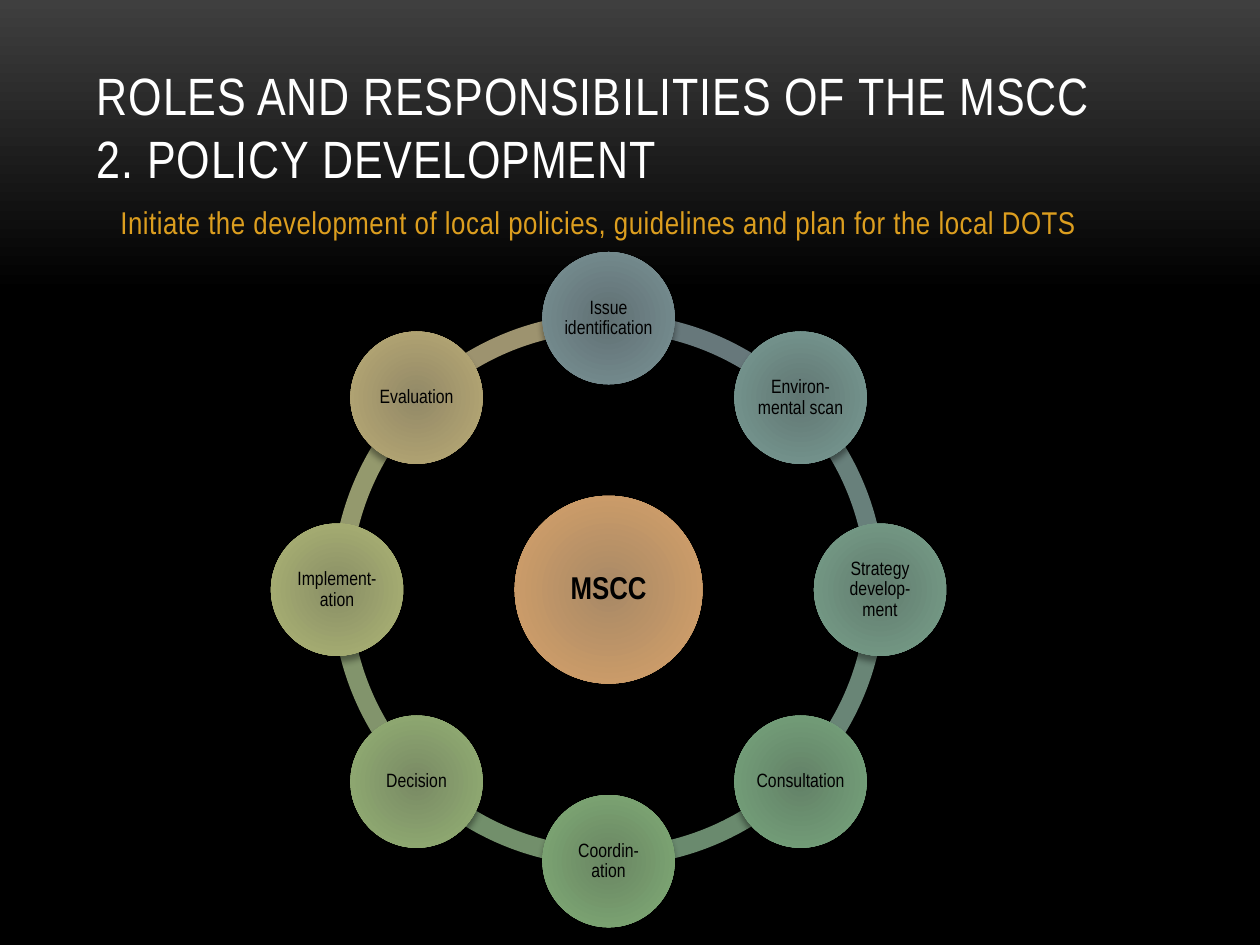
import math

import pptx
import pptx.dml.color
import pptx.enum.shapes
import pptx.enum.text
import pptx.oxml
import pptx.oxml.ns
import pptx.util
from pptx.util import Inches

RGBColor = pptx.dml.color.RGBColor
MSO_SHAPE = pptx.enum.shapes.MSO_SHAPE
ANCHOR = pptx.enum.text.MSO_ANCHOR
ALIGN = pptx.enum.text.PP_ALIGN

WHITE = RGBColor(0xFF, 0xFF, 0xFF)
BLACK = RGBColor(0x00, 0x00, 0x00)
CHARCOAL = RGBColor(0x3F, 0x3F, 0x3F)
AMBER = RGBColor(0xDC, 0x9E, 0x1F)
HUB_INNER = RGBColor(0xA8, 0x89, 0x66)
HUB_OUTER = RGBColor(0xD9, 0xA3, 0x6A)

FONT = "Arial Narrow"

# Clockwise from the top: label, inner colour, outer colour, colour of the arc that follows
STEPS = [
    ("Issue identification", RGBColor(0x60, 0x70, 0x73), RGBColor(0x7B, 0x93, 0x97), RGBColor(0x67, 0x78, 0x7B)),
    ("Environ-mental scan", RGBColor(0x61, 0x77, 0x73), RGBColor(0x7A, 0x9C, 0x95), RGBColor(0x68, 0x80, 0x7B)),
    ("Strategy develop-ment", RGBColor(0x62, 0x7C, 0x6E), RGBColor(0x79, 0xA1, 0x8C), RGBColor(0x69, 0x85, 0x76)),
    ("Consultation", RGBColor(0x63, 0x81, 0x67), RGBColor(0x78, 0xA7, 0x7E), RGBColor(0x6A, 0x8A, 0x6E)),
    ("Coordin-ation", RGBColor(0x6A, 0x86, 0x63), RGBColor(0x81, 0xAD, 0x77), RGBColor(0x72, 0x8F, 0x6B)),
    ("Decision", RGBColor(0x79, 0x8A, 0x64), RGBColor(0x96, 0xB3, 0x76), RGBColor(0x82, 0x94, 0x6C)),
    ("Implement-ation", RGBColor(0x89, 0x8E, 0x66), RGBColor(0xAF, 0xB7, 0x76), RGBColor(0x94, 0x99, 0x6D)),
    ("Evaluation", RGBColor(0x92, 0x89, 0x67), RGBColor(0xBC, 0xAC, 0x76), RGBColor(0x9D, 0x93, 0x6F)),
]

SHADOW_XML = (
    '<a:outerShdw %s blurRad="50800" dist="43180" dir="5400000" rotWithShape="0">'
    '<a:srgbClr val="000000"><a:alpha val="40000"/></a:srgbClr></a:outerShdw>'
) % pptx.oxml.ns.nsdecls("a")
RADIAL_XML = (
    '<a:path %s path="circle">'
    '<a:fillToRect l="100000" t="100000" r="100000" b="100000"/></a:path>'
) % pptx.oxml.ns.nsdecls("a")


def set_gradient(fill, stops):
    fill.gradient()
    for stop, (position, color) in zip(fill.gradient_stops, stops):
        stop.position = position
        stop.color.rgb = color


def write_text(sp, text, size, color, align, anchor, inset=(0.1, 0.05), bold=False, spacing=0, leading=None):
    tf = sp.text_frame
    side, end = Inches(inset[0]), Inches(inset[1])
    frame = {"word_wrap": True, "vertical_anchor": anchor, "margin_left": side,
             "margin_right": side, "margin_top": end, "margin_bottom": end}
    for name, value in frame.items():
        setattr(tf, name, value)
    p = tf.paragraphs[0]
    p.text = text
    p.alignment = align
    p.line_spacing = leading
    for r in p.runs:
        for name, value in {"name": FONT, "size": pptx.util.Pt(size), "bold": bold}.items():
            setattr(r.font, name, value)
        r.font.color.rgb = color
        if spacing:
            r._r.get_or_add_rPr().set("spc", str(round(spacing * 100)))


def add_part(shapes, preset, cx, cy, size):
    """Add a borderless, shadowed square shape centred on (cx, cy)."""
    sp = shapes.add_shape(preset, Inches(cx - size / 2), Inches(cy - size / 2), Inches(size), Inches(size))
    sp.line.fill.background()
    sp.shadow.inherit = False
    effects = sp._element.spPr.find(pptx.oxml.ns.qn("a:effectLst"))
    effects.append(pptx.oxml.parse_xml(SHADOW_XML))
    return sp


def add_disc(shapes, cx, cy, diameter, label, inner, outer, size, inset, bold=False):
    sp = add_part(shapes, MSO_SHAPE.OVAL, cx, cy, diameter)
    set_gradient(sp.fill, [(0, inner), (1, outer)])
    grad = sp._element.spPr.find(pptx.oxml.ns.qn("a:gradFill"))
    linear = grad.find(pptx.oxml.ns.qn("a:lin"))
    grad.replace(linear, pptx.oxml.parse_xml(RADIAL_XML))
    write_text(sp, label, size, BLACK, ALIGN.CENTER, ANCHOR.MIDDLE, (inset, inset), bold, leading=0.9)


def add_heading(slide, left, top, width):
    # Title
    sp = slide.shapes.add_textbox(Inches(left), Inches(top), Inches(width), Inches(1.25))
    write_text(sp, "ROLES AND RESPONSIBILITIES OF THE MSCC\v2. POLICY DEVELOPMENT",
               30, WHITE, ALIGN.LEFT, ANCHOR.BOTTOM, spacing=0.5)
    # Subtitle
    sp = slide.shapes.add_textbox(Inches(left), Inches(top + 1.03), Inches(width - 0.5), Inches(0.63))
    write_text(sp, "Initiate the development of local policies, guidelines and plan for the local DOTS",
               18, AMBER, ALIGN.CENTER, ANCHOR.BOTTOM, spacing=0.3)


def add_cycle(slide, left, top, size):
    node = 1.05
    radius = (size - node) / 2
    cx, cy = left + size / 2, top + size / 2
    shapes = slide.shapes.add_group_shape().shapes

    # Ring of arcs; a full turn is 216 adjustment units and the top is at 162
    turn, start = 216, 162
    step = turn / len(STEPS)
    for i, (_, _, _, color) in reversed(list(enumerate(STEPS))):
        sp = add_part(shapes, MSO_SHAPE.BLOCK_ARC, cx, cy, 4.39)
        sp.fill.solid()
        sp.fill.fore_color.rgb = color
        bounds = ((start + step * i) % turn, (start + step * (i + 1)) % turn, 0.034)
        for k, value in enumerate(bounds):
            sp.adjustments[k] = value

    # Hub
    add_disc(shapes, cx, cy, 1.49, "MSCC", HUB_INNER, HUB_OUTER, 18, 0.03, bold=True)

    # Steps around the ring
    for i, (label, inner, outer, _) in enumerate(STEPS):
        angle = 2 * math.pi * i / len(STEPS)
        x, y = cx + radius * math.sin(angle), cy - radius * math.cos(angle)
        add_disc(shapes, x, y, node, label, inner, outer, 11, 0.02)


def main():
    prs = pptx.Presentation()
    prs.slide_width, prs.slide_height = Inches(10), Inches(7.5)
    slide = prs.slides.add_slide(prs.slide_layouts[6])
    fill = slide.background.fill
    set_gradient(fill, [(0, CHARCOAL), (0.31, BLACK)])
    fill.gradient_angle = 270
    add_heading(slide, 0.67, 0.3, 8.67)
    add_cycle(slide, 2.15, 2, 5.36)
    prs.save("out.pptx")


if __name__ == "__main__":
    main()
